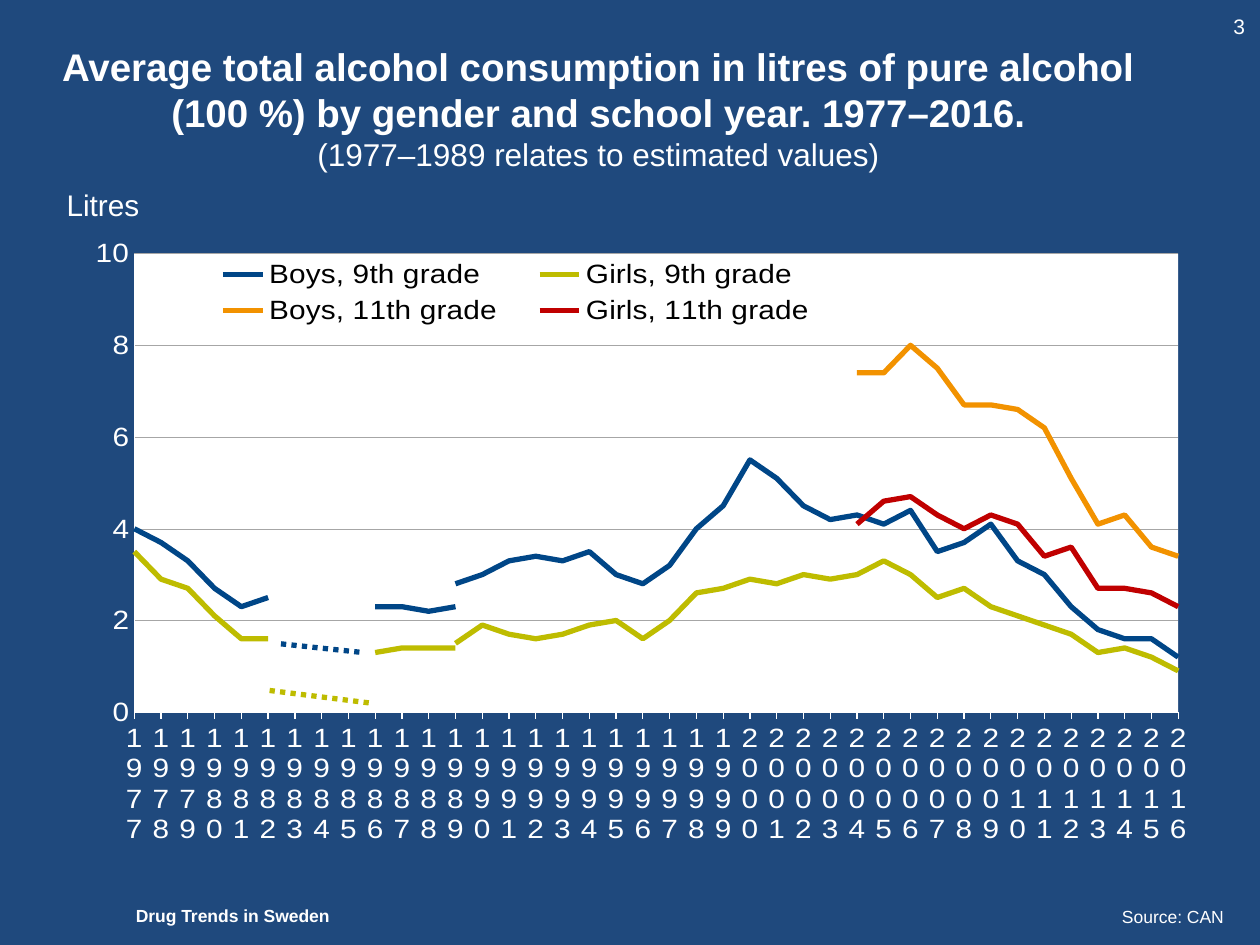
from dataclasses import dataclass

import pptx
import pptx.chart.data
import pptx.dml.color
import pptx.enum.chart
import pptx.enum.dml
import pptx.enum.shapes
import pptx.enum.text
import pptx.oxml
import pptx.oxml.ns
import pptx.util

Inches = pptx.util.Inches
Pt = pptx.util.Pt
Align = pptx.enum.text.PP_ALIGN
Tick = pptx.enum.chart.XL_TICK_MARK
qn = pptx.oxml.ns.qn
Box = tuple[float, float, float, float]


@dataclass(frozen=True)
class Theme:
    font: str = "Arial"
    back: str = "1F497D"
    white: str = "FFFFFF"
    black: str = "000000"
    grid: str = "A6A6A6"
    blue: str = "004687"
    lime: str = "BEBC00"
    gold: str = "F29200"
    red: str = "C00000"
    head: float = 22
    sub: float = 18
    body: float = 17
    page: float = 12
    foot: float = 10
    stroke: float = 3


@dataclass(frozen=True)
class Label:
    text: str
    box: Box
    size: float
    bold: bool = False
    align: Align = Align.LEFT


@dataclass(frozen=True)
class Trend:
    name: str
    start: int
    color: str
    vals: tuple[float | None, ...]
    listed: bool = True


THEME = Theme()
YEARS = range(1977, 2017)
GAP = (None,) * 3
LABELS = [
    Label("Drug Trends in Sweden", (0.98, 7.13, 1.9, 0.27), THEME.foot, bold=True),
    Label("Litres", (0.43, 1.43, 0.79, 0.39), THEME.body),
    Label("Source: CAN", (7.33, 7.14, 2.48, 0.27), THEME.foot, align=Align.RIGHT),
    Label("3", (9.69, 0.06, 0.27, 0.3), THEME.page),
]
TRENDS = [
    Trend("Boys, 9th grade", 1977, THEME.blue,
          (4, 3.7, 3.3, 2.7, 2.3, 2.5, *GAP, 2.3, 2.3, 2.2, 2.3)),
    Trend("Series 2", 1989, THEME.blue,
          (2.8, 3, 3.3, 3.4, 3.3, 3.5, 3, 2.8, 3.2, 4, 4.5, 5.5, 5.1, 4.5, 4.2,
           4.3, 4.1, 4.4, 3.5, 3.7, 4.1, 3.3, 3, 2.3, 1.8, 1.6, 1.6, 1.2), False),
    Trend("Girls, 9th grade", 1977, THEME.lime,
          (3.5, 2.9, 2.7, 2.1, 1.6, 1.6, *GAP, 1.3, 1.4, 1.4, 1.4)),
    Trend("Series 4", 1989, THEME.lime,
          (1.5, 1.9, 1.7, 1.6, 1.7, 1.9, 2, 1.6, 2, 2.6, 2.7, 2.9, 2.8, 3, 2.9,
           3, 3.3, 3, 2.5, 2.7, 2.3, 2.1, 1.9, 1.7, 1.3, 1.4, 1.2, 0.9), False),
    Trend("Boys, 11th grade", 2004, THEME.gold,
          (7.4, 7.4, 8, 7.5, 6.7, 6.7, 6.6, 6.2, 5.1, 4.1, 4.3, 3.6, 3.4)),
    Trend("Girls, 11th grade", 2004, THEME.red,
          (4.1, 4.6, 4.7, 4.3, 4, 4.3, 4.1, 3.4, 3.6, 2.7, 2.7, 2.6, 2.3)),
]


def rgb(code: str) -> pptx.dml.color.RGBColor:
    return pptx.dml.color.RGBColor.from_string(code)

def style(font, size: float, color: str = THEME.white, bold: bool = False) -> None:
    font.name, font.size, font.bold = THEME.font, Pt(size), bold
    font.color.rgb = rgb(color)

def stroke(line, color: str, width: float) -> None:
    line.color.rgb = rgb(color)
    line.width = Pt(width)

def add_run(para, text: str, size: float, bold: bool = False) -> None:
    run = para.add_run()
    run.text = text
    style(run.font, size, bold=bold)

def add_title(slide) -> None:
    title = slide.shapes.title
    title.left, title.top = Inches(0), Inches(0.3)
    title.width, title.height = Inches(9.5), Inches(1.11)
    frame = title.text_frame
    frame.auto_size = pptx.enum.text.MSO_AUTO_SIZE.NONE
    frame.vertical_anchor = pptx.enum.text.MSO_ANCHOR.MIDDLE
    para = frame.paragraphs[0]
    para.alignment = Align.CENTER
    for text in ("Average total alcohol consumption in litres of pure alcohol",
                 "(100 %) by gender and school year. 1977–2016."):
        add_run(para, text, THEME.head, bold=True)
        para.add_line_break()
    add_run(para, "(1977–1989 relates to estimated values)", THEME.sub)

def add_label(slide, label: Label) -> None:
    frame = slide.shapes.add_textbox(*map(Inches, label.box)).text_frame
    frame.word_wrap = True
    para = frame.paragraphs[0]
    para.alignment = label.align
    add_run(para, label.text, label.size, label.bold)

def add_dash(slide, ends: Box, color: str) -> None:
    kind = pptx.enum.shapes.MSO_CONNECTOR.STRAIGHT
    link = slide.shapes.add_connector(kind, *map(Inches, ends))
    stroke(link.line, color, THEME.stroke)
    link.line.dash_style = pptx.enum.dml.MSO_LINE.ROUND_DOT
    props = link._element.spPr
    props.append(props.makeelement(qn("a:effectLst"), {}))

def node(tag: str, body: str = "", val: object = None):
    """Make a chart element from its tag, inner XML and val attribute."""
    attr = "" if val is None else f' val="{val}"'
    names = pptx.oxml.ns.nsdecls("c", "a")
    return pptx.oxml.parse_xml(f"<c:{tag} {names}{attr}>{body}</c:{tag}>")

def layout(box: Box, inner: bool = False):
    """Make a manual layout from fractions of the chart area."""
    body = '<c:layoutTarget val="inner"/>' if inner else ""
    body += '<c:xMode val="edge"/><c:yMode val="edge"/>'
    body += "".join(f'<c:{name} val="{val}"/>' for name, val in zip("xywh", box))
    return node("layout", f"<c:manualLayout>{body}</c:manualLayout>")

def style_axes(chart) -> None:
    years, litres = chart.category_axis, chart.value_axis
    for axis, width, tick in ((years, 0.75, Tick.OUTSIDE), (litres, 0.25, Tick.NONE)):
        style(axis.tick_labels.font, THEME.body)
        stroke(axis.format.line, THEME.white, width)
        axis.major_tick_mark, axis.minor_tick_mark = tick, Tick.NONE
    next(years._element.iter(qn("a:bodyPr"))).set("rot", "0")
    years._element.find(qn("c:noMultiLvlLbl")).addprevious(node("tickLblSkip", val=1))
    litres.minimum_scale, litres.maximum_scale, litres.major_unit = 0, 10, 2
    litres.tick_labels.number_format = "0"
    litres.tick_labels.number_format_is_linked = False
    stroke(litres.major_gridlines.format.line, THEME.grid, 0.25)
    for old in litres._element.findall(qn("c:crossBetween")):
        litres._element.remove(old)
    litres._element.find(qn("c:crosses")).addnext(node("crossBetween", val="midCat"))

def style_legend(chart) -> None:
    chart.has_legend = True
    legend = chart.legend
    legend.include_in_layout = False
    style(legend.font, THEME.body, THEME.black)
    for old in legend._element.findall(qn("c:layout")):
        legend._element.remove(old)
    spot = legend._element.find(qn("c:overlay"))
    for index, trend in enumerate(TRENDS):
        if not trend.listed:
            body = f'<c:idx val="{index}"/><c:delete val="1"/>'
            spot.addprevious(node("legendEntry", body))
    spot.addprevious(layout((0.1, 0.06, 0.58, 0.14)))

def add_chart(slide) -> None:
    data = pptx.chart.data.CategoryChartData()
    data.categories = [str(year) for year in YEARS]
    for trend in TRENDS:
        lead = trend.start - YEARS[0]
        tail = len(YEARS) - lead - len(trend.vals)
        data.add_series(trend.name, (None,) * lead + trend.vals + (None,) * tail)
    box = map(Inches, (0.62, 1.75, 8.91, 4.95))
    kind = pptx.enum.chart.XL_CHART_TYPE.LINE
    chart = slide.shapes.add_chart(kind, *box, data).chart
    chart.has_title = False
    style(chart.font, THEME.body)
    chart.plots[0].vary_by_categories = False
    for series, trend in zip(chart.plots[0].series, TRENDS):
        series.smooth = False
        series.marker.style = pptx.enum.chart.XL_MARKER_STYLE.NONE
        stroke(series.format.line, trend.color, THEME.stroke)
    style_axes(chart)
    style_legend(chart)
    area = chart._chartSpace.chart.plotArea
    for old in area.findall(qn("c:layout")):
        area.remove(old)
    area.insert(0, layout((0.05, 0.06, 0.93, 0.83), inner=True))
    fill = f'<a:solidFill><a:srgbClr val="{THEME.white}"/></a:solidFill>'
    area.append(node("spPr", fill))

def main() -> None:
    deck = pptx.Presentation()
    deck.slide_width, deck.slide_height = Inches(10), Inches(7.5)
    slide = deck.slides.add_slide(deck.slide_layouts[5])
    slide.background.fill.solid()
    slide.background.fill.fore_color.rgb = rgb(THEME.back)
    add_title(slide)
    add_chart(slide)
    for label in LABELS:
        add_label(slide, label)
    add_dash(slide, (2.23, 5.11, 2.89, 5.18), THEME.blue)
    add_dash(slide, (2.14, 5.48, 2.94, 5.58), THEME.lime)
    deck.save("out.pptx")


if __name__ == "__main__":
    main()
